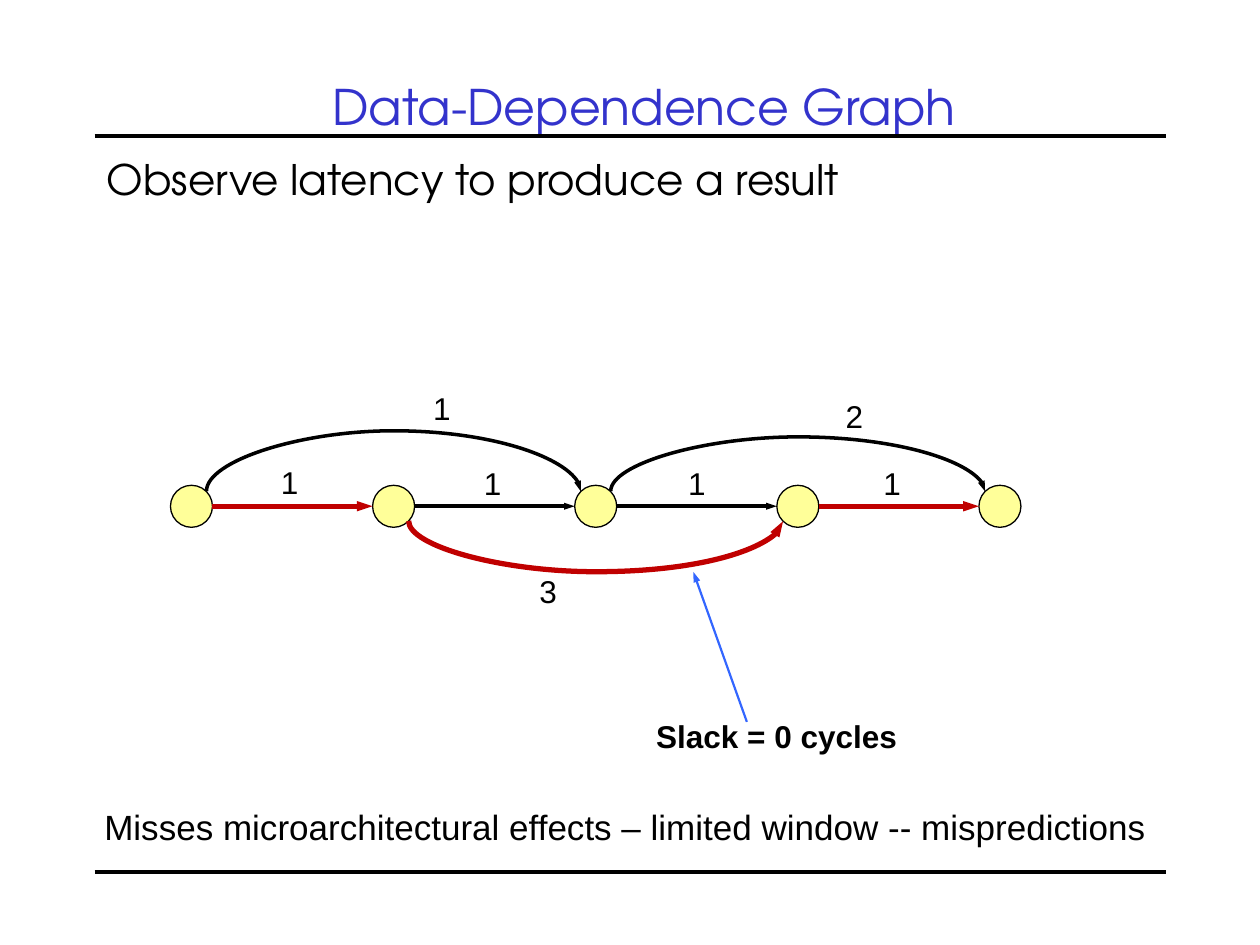
from lxml.etree import SubElement as Sub
from pptx import Presentation
from pptx.dml.color import RGBColor as Rgb
from pptx.enum.shapes import MSO_CONNECTOR as Link, MSO_SHAPE as Form
from pptx.enum.text import MSO_ANCHOR as Anchor, MSO_AUTO_SIZE as Fit, PP_ALIGN as Align
from pptx.oxml.ns import qn
from pptx.util import Pt

HUES = {"ink": "000000", "title": "3333CC", "node": "FFFF99",
        "path": "C00000", "note": "3366FF"}
HEAD = {"name": "TeX Gyre Adventor"}
BODY = {"name": "Arial"}


def tint(hue):
    """Return the named colour."""
    return Rgb.from_string(HUES[hue])


def style(item, form):
    """Set each format value on the item."""
    for key, val in form.items():
        setattr(item, key, val)


def write(slide, box, text, size, font, hue="ink", align=Align.LEFT, **frame):
    """Place one line of text in a box."""
    shape = slide.shapes.add_textbox(*map(Pt, box))
    style(shape.text_frame, {"word_wrap": True, **frame})
    para = shape.text_frame.paragraphs[0]
    para.alignment = align
    run = para.add_run()
    run.text = text
    style(run.font, {"size": Pt(size), **font})
    run.font.color.rgb = tint(hue)


def link(slide, ends, hue, width, kind=Link.STRAIGHT, arrow=True):
    """Draw a line between two points, with an arrowhead if asked."""
    line = slide.shapes.add_connector(kind, *map(Pt, ends))
    line.line.color.rgb = tint(hue)
    line.line.width = Pt(width)
    if arrow:
        Sub(line.line._get_or_add_ln(), qn("a:tailEnd"), type="triangle", w="sm")
    Sub(line._element.spPr, qn("a:effectLst"))
    return line


def arc(slide, left, right, y, rise, hue, width):
    """Bend a curved arrow from left to right, up for a positive rise."""
    span, thin = right - left, 0.17
    mid = (left + right) / 2
    curve = link(slide, (mid, y - span / 2, mid + thin, y + span / 2),
                 hue, width, Link.CURVE)
    props = curve._element.spPr
    turn, flip = (90, "flipV") if rise > 0 else (270, "flipH")
    frame = props.find(qn("a:xfrm"))
    frame.set("rot", str(turn * 60000))
    frame.set(flip, "1")
    ratio = round(-rise / thin * 100000)
    guides = props.find(qn("a:prstGeom")).get_or_add_avLst()
    Sub(guides, qn("a:gd"), name="adj1", fmla=f"val {ratio}")


def header(slide, box):
    """Write the title over its rule, and the lead line below."""
    x, y, w, h = box
    write(slide, (x + 6, y, w + 4, 60.5), "Data-Dependence Graph", 28, HEAD,
          "title", Align.CENTER, vertical_anchor=Anchor.MIDDLE)
    link(slide, (x, y + 47.5, x + w, y + 47.5), "ink", 2.25, arrow=False)
    write(slide, (x, y + 54, w, h - 54),
          "Observe latency to produce a result", 24, HEAD)


def graph(slide, box):
    """Draw the chain of nodes, its arrows, weights and slack note."""
    x, y, w, h = box
    size, count = 24, 5
    half, slant = size / 2, size / 2 * 0.71
    gap = (w - size) / (count - 1)
    mids = [x + half + gap * i for i in range(count)]
    axis = y + 72
    for mid in mids:
        node = slide.shapes.add_shape(
            Form.OVAL, *map(Pt, (mid - half, axis - half, size, size)))
        node.shadow.inherit = False
        node.fill.solid()
        node.fill.fore_color.rgb = tint("node")
        node.line.color.rgb = tint("ink")
        node.line.width = Pt(0.75)
    looks = {"ink": 2, "path": 3}
    for a, b, hue in zip(mids, mids[1:], ("path", "ink", "ink", "path")):
        link(slide, (a + half, axis, b - half, axis), hue, looks[hue])
    for i, rise, hue in ((0, 34.5, "ink"), (1, -29, "path"), (2, 31, "ink")):
        side = -slant if rise > 0 else slant
        arc(slide, mids[i] + slant, mids[i + 2] - slant, axis + side,
            rise, hue, looks[hue])
    weights = (("1", 56, 43.5), ("1", 172, 44.3), ("1", 288.8, 44.2),
               ("1", 400.3, 44.2), ("1", 143, 1.5), ("2", 378.7, 6),
               ("3", 203.7, 106))
    for text, dx, dy in weights:
        write(slide, (x + dx, y + dy, 24, 29), text, 18, BODY,
              auto_size=Fit.SHAPE_TO_FIT_TEXT)
    link(slide, (x + 329.4, y + h - 22.5, x + 298.8, y + 109.5), "note", 1.25)
    write(slide, (x + 270.5, y + h - 29, 203, 29), "Slack = 0 cycles", 18,
          {**BODY, "bold": True}, auto_size=Fit.SHAPE_TO_FIT_TEXT)


def footer(slide, box):
    """Write the closing remark over the bottom rule."""
    x, y, w, h = box
    write(slide, (x - 1.5, y, w + 2, 31.5),
          "Misses microarchitectural effects – limited window -- mispredictions",
          20, BODY, word_wrap=False, auto_size=Fit.SHAPE_TO_FIT_TEXT)
    link(slide, (x, y + h, x + w, y + h), "ink", 2.25, arrow=False)


def main():
    """Build and save the slide."""
    deck = Presentation()
    style(deck, {"slide_width": Pt(720), "slide_height": Pt(540)})
    slide = deck.slides.add_slide(deck.slide_layouts[6])
    header(slide, (54, 30.3, 612, 100))
    graph(slide, (97.4, 217.3, 486, 217.7))
    footer(slide, (54, 456.5, 612, 41.7))
    deck.save("out.pptx")


if __name__ == "__main__":
    main()
